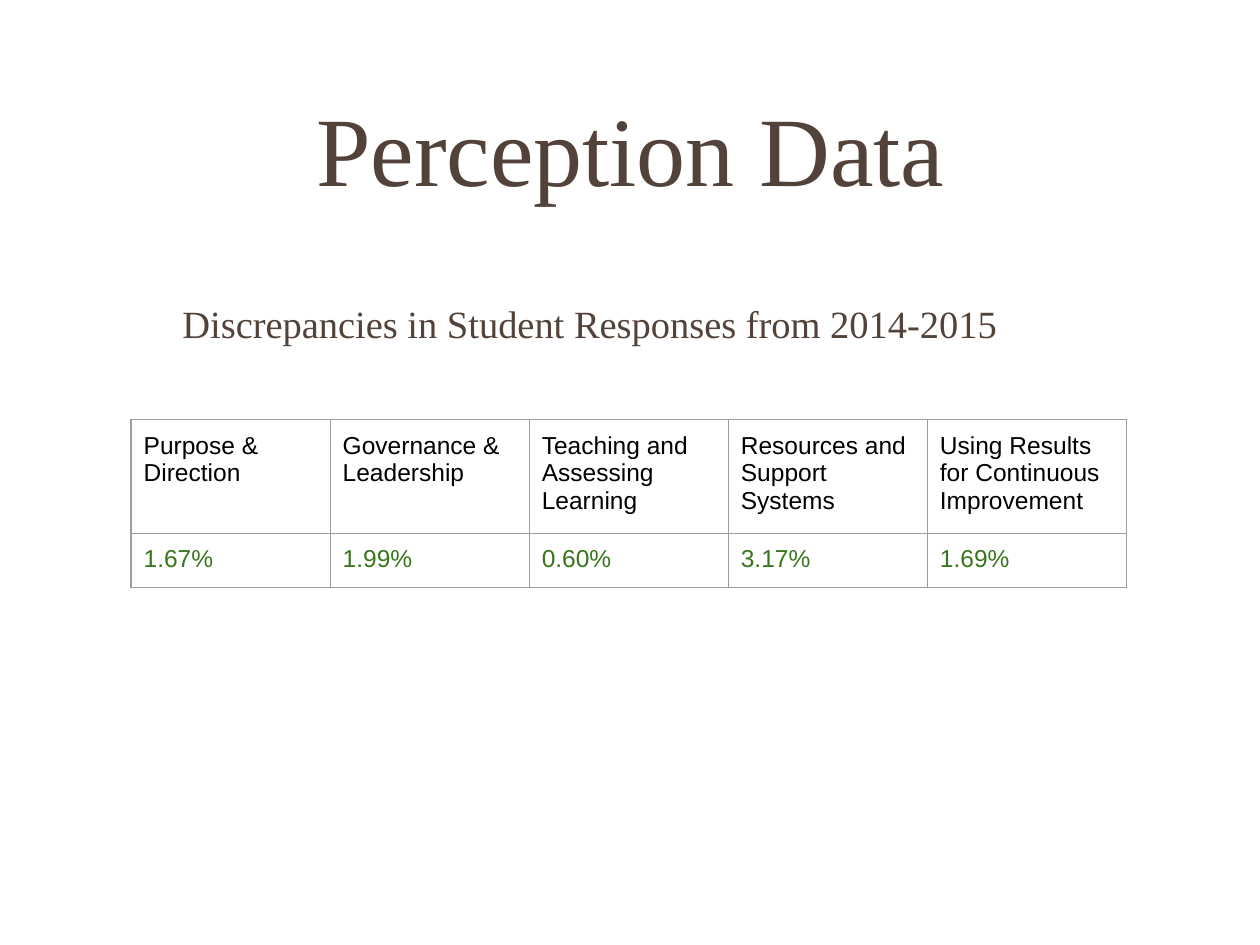
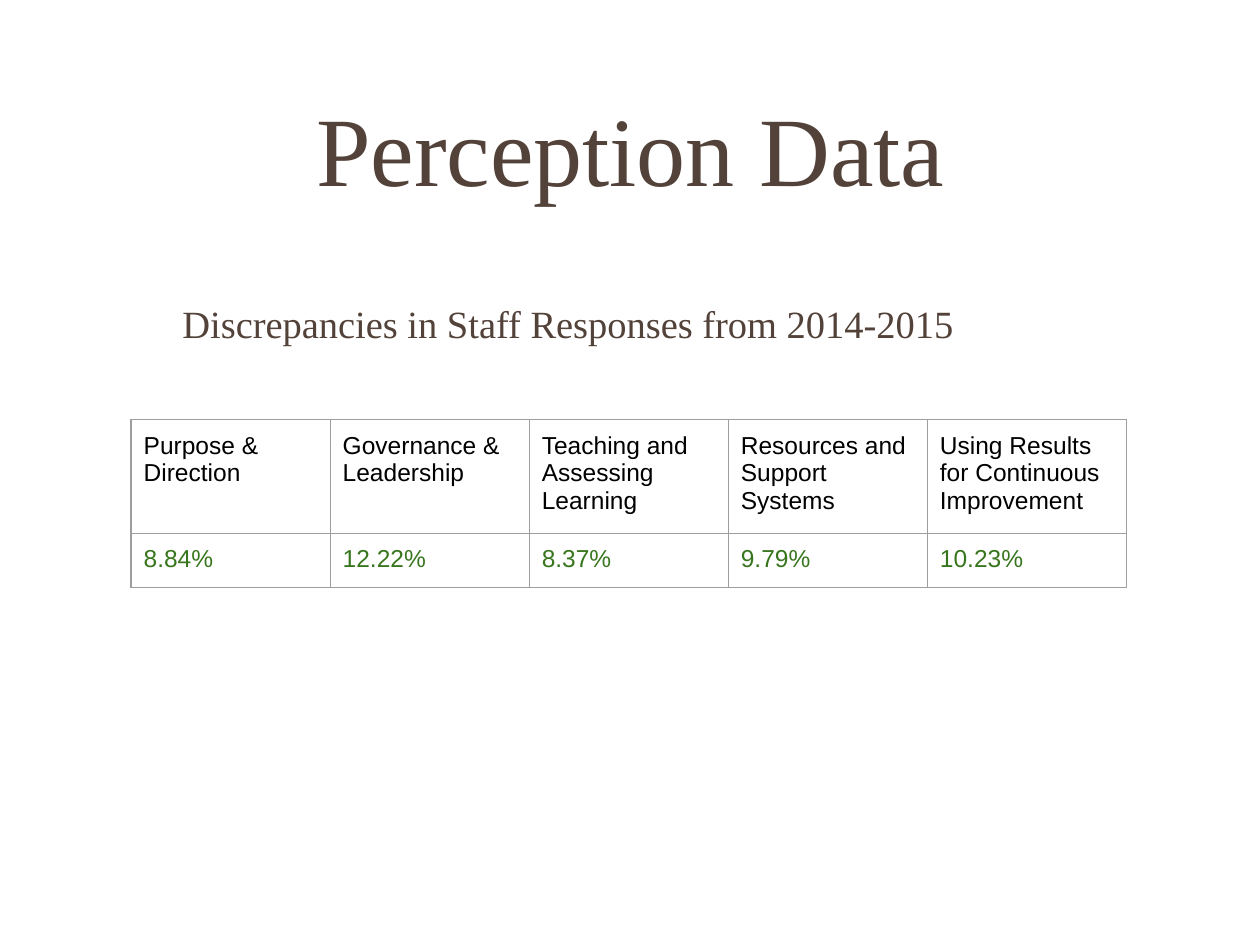
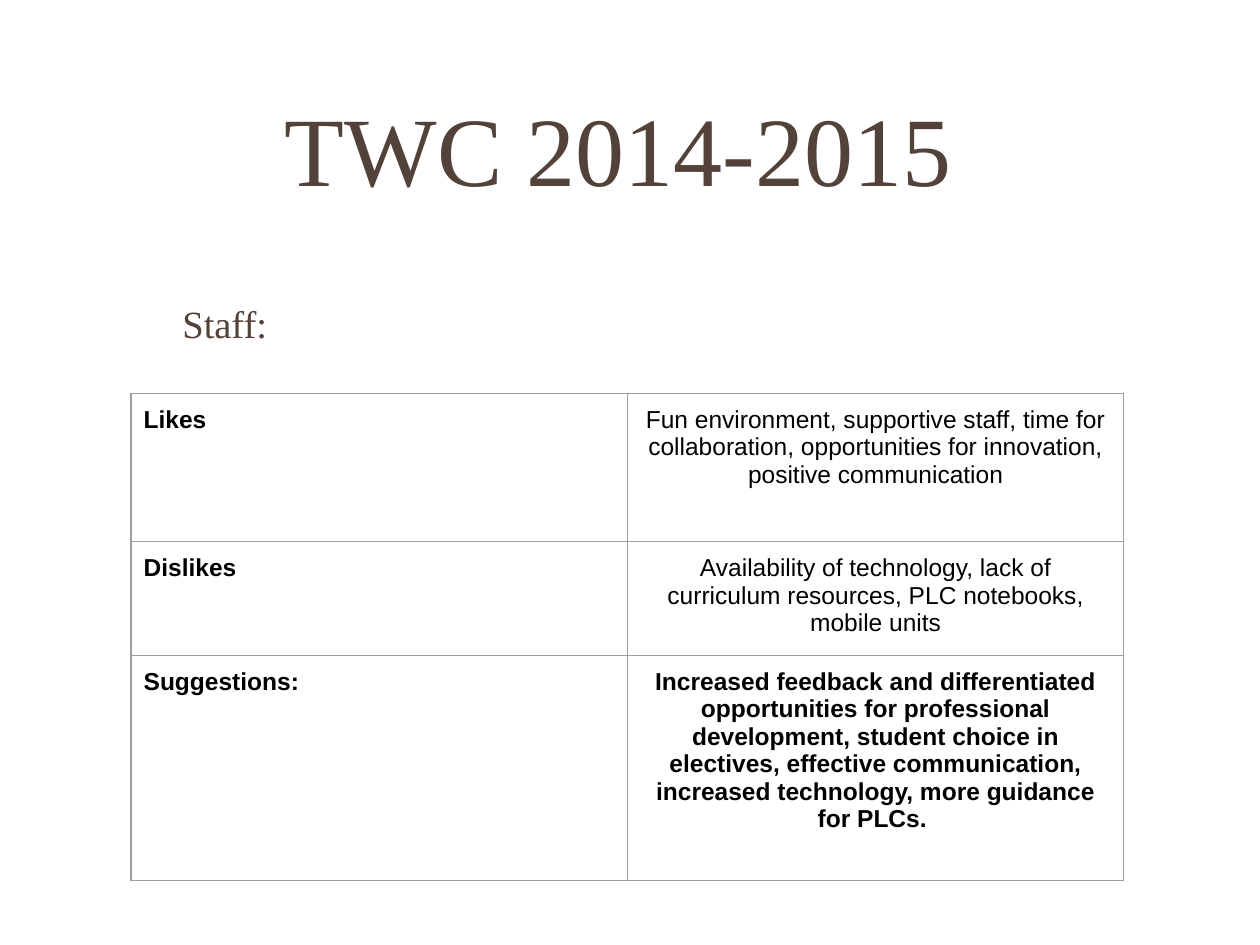
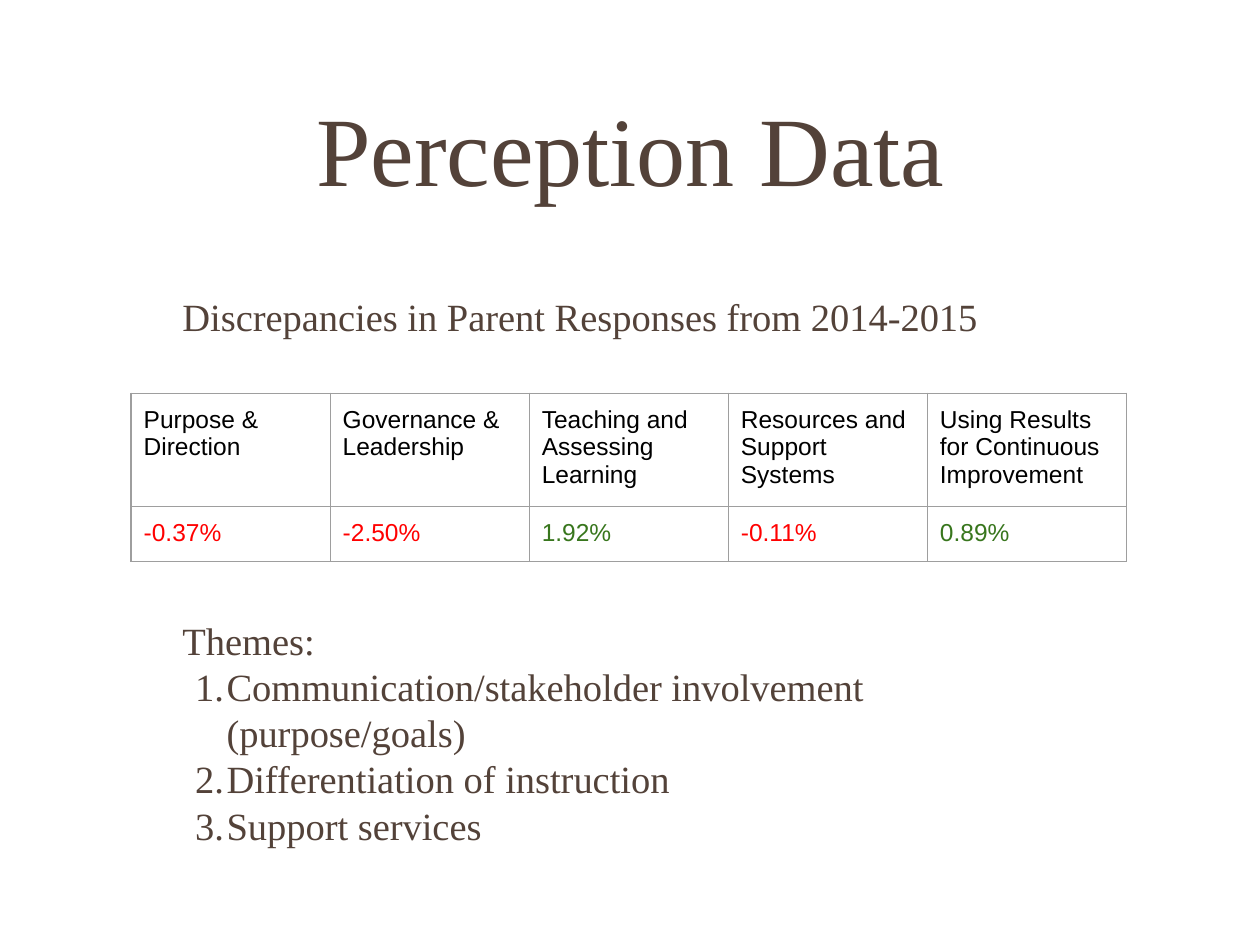
import pptx
import pptx.dml.color
import pptx.enum.text
import pptx.oxml
import pptx.oxml.ns
import pptx.util
from pptx.util import Inches, Pt

# Content
PERCEPTION = "Perception Data"
AREAS = ["Purpose & Direction", "Governance & Leadership",
         "Teaching and Assessing Learning", "Resources and Support Systems",
         "Using Results for Continuous Improvement"]
THEMES = ["Communication/stakeholder involvement (purpose/goals)",
          "Differentiation of instruction", "Support services"]
STAFF_VIEWS = [
    ["Likes", "Fun environment, supportive staff, time for collaboration, "
     "opportunities for innovation, positive communication"],
    ["Dislikes", "Availability of technology, lack of curriculum resources, "
     "PLC notebooks, mobile units"],
    ["Suggestions:", "Increased feedback and differentiated opportunities for "
     "professional development, student choice in electives, effective "
     "communication, increased technology, more guidance for PLCs. "],
]
SLIDES = [
    {"title": PERCEPTION,
     "subtitle": "Discrepancies in Student Responses from 2014-2015",
     "rows": [AREAS, ["1.67%", "1.99%", "0.60%", "3.17%", "1.69%"]],
     "top": 3.33, "heights": [0.42, 0.42]},
    {"title": PERCEPTION,
     "subtitle": "Discrepancies in Staff Responses from 2014-2015",
     "rows": [AREAS, ["8.84%", "12.22%", "8.37%", "9.79%", "10.23%"]],
     "top": 3.33, "heights": [0.42, 0.42]},
    {"title": "TWC 2014-2015 ",
     "subtitle": "Staff:",
     "rows": STAFF_VIEWS,
     "top": 3.12, "heights": [1.18, 0.88, 1.79]},
    {"title": PERCEPTION,
     "subtitle": "Discrepancies in Parent Responses from 2014-2015",
     "rows": [AREAS, ["-0.37%", "-2.50%", "1.92%", "-0.11%", "0.89%"]],
     "top": 3.12, "heights": [0.58, 0.25],
     "themes": THEMES, "inset": 0.05},
]

# Shared look
BROWN, BLACK, GREEN, RED, GREY = "534239", "000000", "38761D", "FF0000", "9E9E9E"
TITLE_FONT = {"name": "Times New Roman", "size": Pt(56)}
BODY_FONT = {"name": "Times New Roman", "size": Pt(22)}
CELL_FONT = {"name": "Arial", "size": Pt(14)}
TITLE_BOX = (0.88, 0.42, 8.25, 1.5)
BODY_BOX = (1.2, 2.28, 7.6, 3.98)
TABLE_LEFT, TABLE_WIDTH = 1.04, 7.9
LINE_FACTOR = 1.2
THEMES_GAP_LINES = 6
CENTER = pptx.enum.text.PP_ALIGN.CENTER
MIDDLE = pptx.enum.text.MSO_ANCHOR.MIDDLE


def rgb(value):
    return pptx.dml.color.RGBColor.from_string(value)


def add_xml(parent, xml):
    declared = xml.replace(" ", f" {pptx.oxml.ns.nsdecls('a')} ", 1)
    parent.append(pptx.oxml.parse_xml(declared))


def set_insets(target, side, vertical):
    insets = {"margin_left": side, "margin_right": side,
              "margin_top": vertical, "margin_bottom": vertical}
    for name, value in insets.items():
        setattr(target, name, Inches(value))


def write(paragraph, text, style, color, align=None):
    run = paragraph.add_run()
    run.text = text
    for name, value in style.items():
        setattr(run.font, name, value)
    run.font.color.rgb = rgb(color)
    paragraph.alignment = align


def add_frame(slide, box, inset):
    frame = slide.shapes.add_textbox(*map(Inches, box)).text_frame
    frame.word_wrap = True
    set_insets(frame, 0.1, inset)
    return frame


def add_title(slide, title, inset):
    frame = add_frame(slide, TITLE_BOX, inset)
    frame.vertical_anchor = MIDDLE
    heading = frame.paragraphs[0]
    heading.line_spacing = Pt(56 * LINE_FACTOR)
    write(heading, title, TITLE_FONT, BROWN, CENTER)


def write_body(paragraph, text, numbered=False):
    properties = paragraph._p.get_or_add_pPr()
    properties.set("marL", str(Inches(0.5)))
    properties.set("indent", str(Inches(-0.25 if numbered else -0.35)))
    if numbered:
        add_xml(properties, f'<a:buClr ><a:srgbClr val="{BROWN}"/></a:buClr>')
        add_xml(properties, '<a:buAutoNum type="arabicPeriod"/>')
    paragraph.line_spacing = Pt(22 * LINE_FACTOR)
    write(paragraph, text, BODY_FONT, BROWN)


def add_body(slide, subtitle, themes, inset):
    frame = add_frame(slide, BODY_BOX, inset)
    write_body(frame.paragraphs[0], subtitle)
    if themes:
        # The gap leaves room for the table between subtitle and themes
        label = frame.add_paragraph()
        write_body(label, "Themes:")
        label.space_before = Pt(THEMES_GAP_LINES * 22 * LINE_FACTOR)
    for theme in themes:
        write_body(frame.add_paragraph(), theme, numbered=True)


def cell_look(text, row, column, column_count):
    """Return colour, bold and alignment of a table cell."""
    if column_count == 2:
        bold = column == 0 or row == 2
        return BLACK, bold, CENTER if column == 1 else None
    if row == 0:
        return BLACK, False, None
    return RED if text.startswith("-") else GREEN, False, None


def add_grid(slide, rows, top, heights):
    column_count = len(rows[0])
    column_width = round(TABLE_WIDTH / column_count, 2)
    if column_count == 2:
        column_width = 3.94
    table = slide.shapes.add_table(
        len(rows), column_count, Inches(TABLE_LEFT), Inches(top),
        Inches(column_width * column_count), Inches(sum(heights))).table
    table.first_row = table.horz_banding = False
    for column in table.columns:
        column.width = Inches(column_width)
    for r, (height, texts) in enumerate(zip(heights, rows)):
        table.rows[r].height = Inches(height)
        for c, text in enumerate(texts):
            cell = table.cell(r, c)
            set_insets(cell, 0.1, 0.1)
            color, bold, align = cell_look(text, r, c, column_count)
            write(cell.text_frame.paragraphs[0], text,
                  {**CELL_FONT, "bold": bold}, color, align)
            for side in "LRTB":
                add_xml(cell._tc.get_or_add_tcPr(),
                        f'<a:ln{side} w="{Pt(0.75)}"><a:solidFill>'
                        f'<a:srgbClr val="{GREY}"/></a:solidFill></a:ln{side}>')
            cell.fill.background()


def main():
    deck = pptx.Presentation()
    deck.slide_width, deck.slide_height = Inches(10), Inches(7.5)
    for content in SLIDES:
        slide = deck.slides.add_slide(deck.slide_layouts[6])
        inset = content.get("inset", 0.1)
        add_title(slide, content["title"], inset)
        add_body(slide, content["subtitle"], content.get("themes", []), inset)
        add_grid(slide, content["rows"], content["top"], content["heights"])
    deck.save("out.pptx")


if __name__ == "__main__":
    main()
